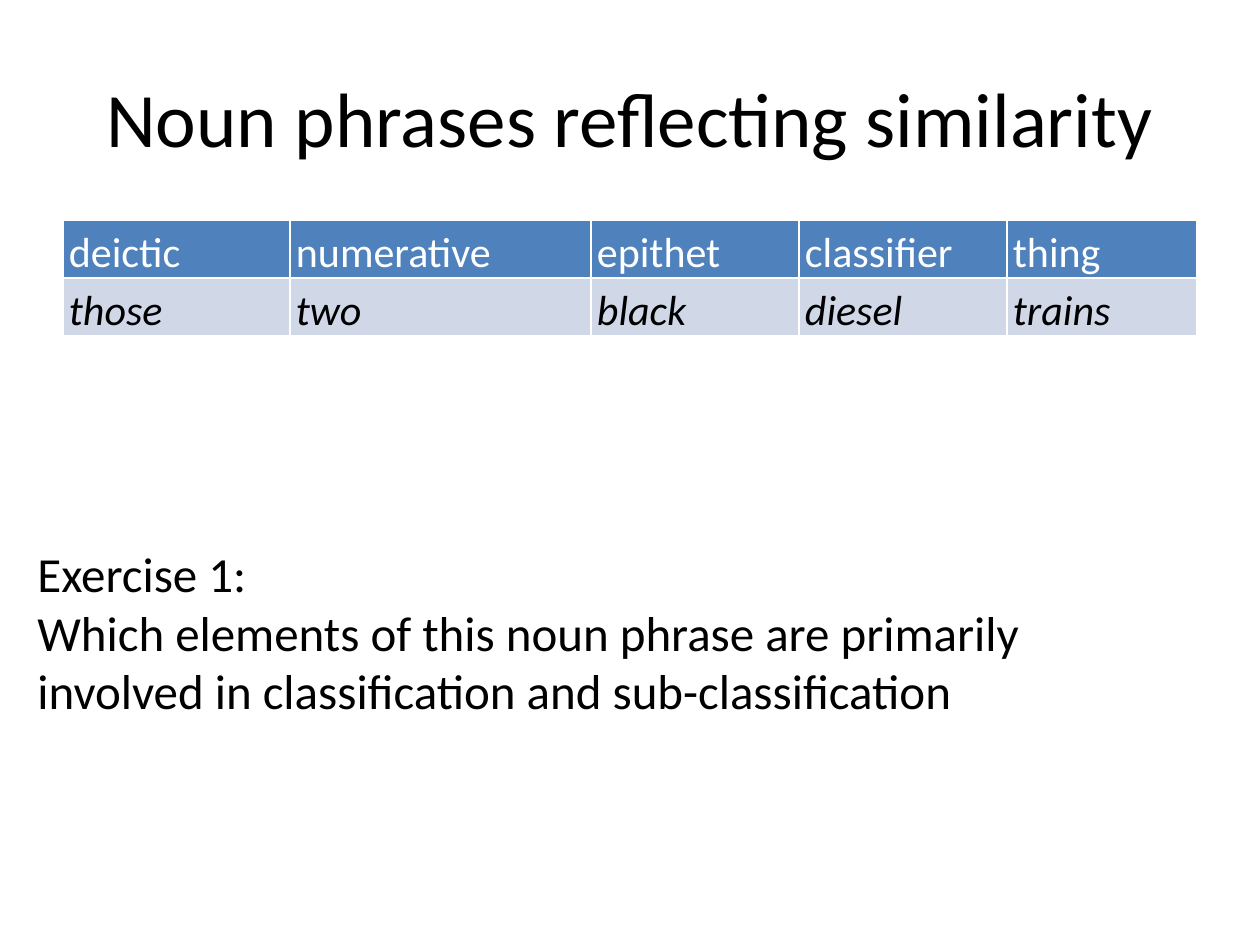
"""Builds a slide on noun phrases that reflect similarity."""
from lxml.etree import SubElement
from pptx import Presentation
from pptx.dml.color import RGBColor
from pptx.enum.text import MSO_ANCHOR, PP_ALIGN
from pptx.oxml.ns import qn
from pptx.util import Emu, Pt

COLORS = {"text": "000000", "header": "4F81BD", "band": "D0D8E8", "light": "FFFFFF"}
PX_PER_INCH = 126


def px(length):
    return Emu(round(length * 914400 / PX_PER_INCH))


class SlideBuilder:
    def __init__(self, presentation, font="Calibri"):
        self.slide = presentation.slides.add_slide(presentation.slide_layouts[5])
        self.font = font

    def style(self, paragraph, size, color="text", italic=False):
        font = paragraph.font
        font.name, font.size = self.font, Pt(size)
        font.bold, font.italic = False, italic
        font.color.rgb = RGBColor.from_string(COLORS[color])

    def title(self, wording, left, top, width, height):
        heading = self.slide.shapes.title
        heading.left, heading.top = px(left), px(top)
        heading.width, heading.height = px(width), px(height)
        frame = heading.text_frame
        frame.text = wording
        frame.vertical_anchor = MSO_ANCHOR.MIDDLE
        frame.paragraphs[0].alignment = PP_ALIGN.CENTER
        self.style(frame.paragraphs[0], 44)

    def text(self, lines, left, top, width, height):
        box = self.slide.shapes.add_textbox(px(left), px(top), px(width), px(height))
        frame = box.text_frame
        frame.word_wrap = True
        frame.vertical_anchor = MSO_ANCHOR.BOTTOM
        frame.text = "\n".join(lines)
        for paragraph in frame.paragraphs:
            self.style(paragraph, 28)

    def border(self, cell):
        properties = cell._tc.get_or_add_tcPr()
        for position, side in enumerate(("lnL", "lnR", "lnT", "lnB")):
            line = SubElement(properties, qn(f"a:{side}"), w=str(Pt(1)))
            properties.insert(position, line)
            fill = SubElement(line, qn("a:solidFill"))
            SubElement(fill, qn("a:srgbClr"), val=COLORS["light"])

    def cell(self, cell, wording, is_header):
        cell.text = wording
        cell.margin_left = cell.margin_right = px(6)
        cell.margin_top = cell.margin_bottom = 0
        cell.fill.solid()
        cell.fill.fore_color.rgb = RGBColor.from_string(COLORS["header" if is_header else "band"])
        paragraph = cell.text_frame.paragraphs[0]
        paragraph.line_spacing = 1.15
        self.style(paragraph, 24, "light" if is_header else "text", italic=not is_header)
        self.border(cell)

    def table(self, rows, left, top, widths, row_height):
        grid = self.slide.shapes.add_table(
            len(rows), len(widths), px(left), px(top),
            px(sum(widths)), px(row_height * len(rows))).table
        for column, width in zip(grid.columns, widths):
            column.width = px(width)
        for row_index, row in enumerate(rows):
            for column_index, wording in enumerate(row):
                self.cell(grid.cell(row_index, column_index), wording, row_index == 0)


def main():
    presentation = Presentation()
    presentation.slide_width, presentation.slide_height = px(1260), px(945)
    builder = SlideBuilder(presentation)
    builder.title("Noun phrases reflecting similarity", 63, 38, 1134, 158)
    builder.text(
        ["Exercise 1:",
         "Which elements of this noun phrase are primarily involved in "
         "classification and sub-classification"],
        25, 493, 1142, 233)
    builder.table(
        [["deictic", "numerative", "epithet", "classifier", "thing"],
         ["those", "two", "black", "diesel", "trains"]],
        63, 220, [227, 301, 208, 208, 190], 58)
    presentation.save("out.pptx")


if __name__ == "__main__":
    main()
